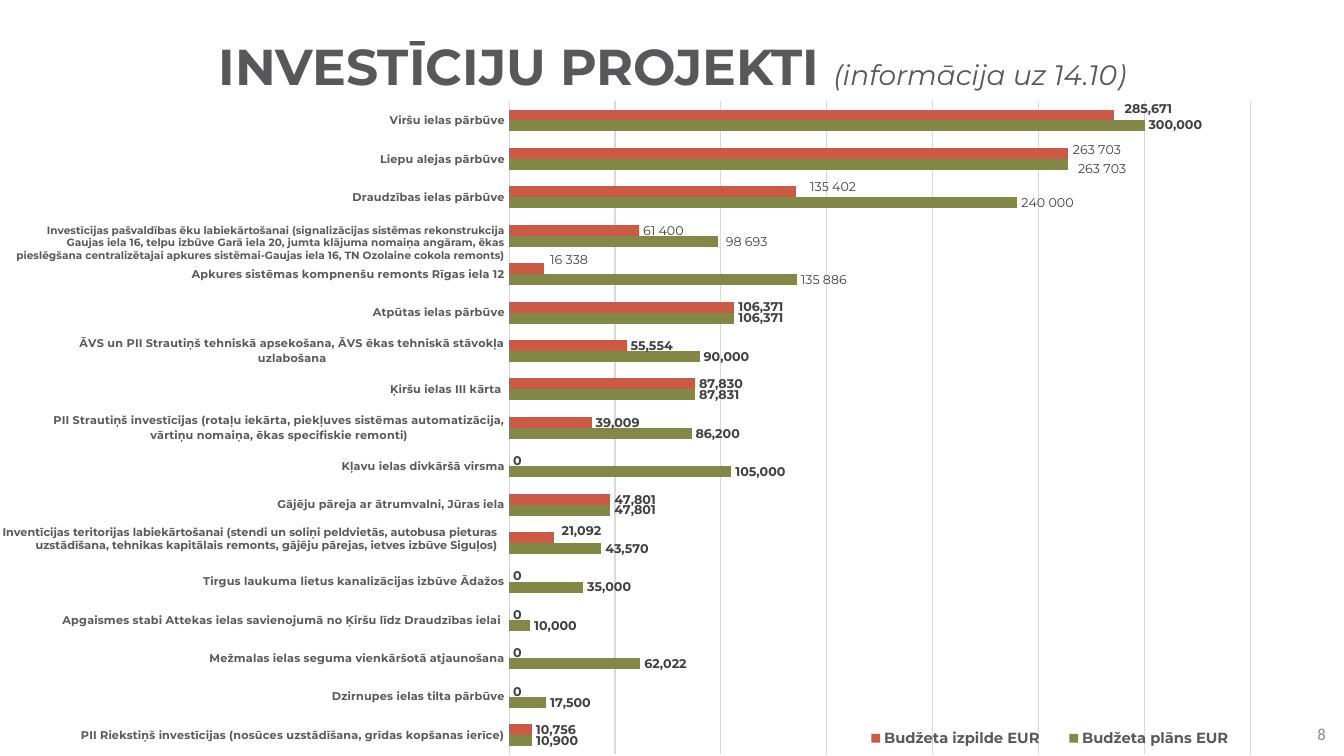
from lxml import etree
from pptx import Presentation
from pptx.chart.data import CategoryChartData
from pptx.dml.color import RGBColor
from pptx.enum.chart import XL_CHART_TYPE, XL_LABEL_POSITION, XL_LEGEND_POSITION, XL_TICK_MARK
from pptx.enum.text import MSO_ANCHOR, PP_ALIGN
from pptx.oxml import parse_xml
from pptx.util import Inches, Pt

BAR = XL_CHART_TYPE.BAR_CLUSTERED
OUTSIDE_END = XL_LABEL_POSITION.OUTSIDE_END
BOTTOM = XL_LEGEND_POSITION.BOTTOM
NO_TICK = XL_TICK_MARK.NONE
MIDDLE = MSO_ANCHOR.MIDDLE
CENTER, RIGHT = PP_ALIGN.CENTER, PP_ALIGN.RIGHT

TITLE_GREY = RGBColor(0x58, 0x58, 0x5B)
TEXT_GREY = RGBColor(0x59, 0x59, 0x59)
LABEL_GREY = RGBColor(0x40, 0x40, 0x40)
GRID_GREY = RGBColor(0xD9, 0xD9, 0xD9)
NUMBER_GREY = RGBColor(0x8C, 0x8C, 0x8C)
OLIVE = RGBColor(0x82, 0x88, 0x47)
RED = RGBColor(0xC9, 0x5B, 0x46)
FONT = "Montserrat"
C_NS = "http://schemas.openxmlformats.org/drawingml/2006/chart"

TITLE = "INVESTĪCIJU PROJEKTI "
SUBTITLE = "(informācija uz 14.10)"
# Project, planned budget, spent budget; from the bottom bar to the top one
PROJECTS = [
    ("PII Riekstiņš investīcijas (nosūces uzstādīšana, grīdas kopšanas ierīce)", 10900, 10756),
    ("Dzirnupes ielas tilta pārbūve", 17500, 0),
    ("Mežmalas ielas seguma vienkāršotā atjaunošana", 62022, 0),
    ("Apgaismes stabi Attekas ielas savienojumā no Ķiršu līdz Draudzības ielai ", 10000, 0),
    ("Tirgus laukuma lietus kanalizācijas izbūve Ādažos", 35000, 0),
    ("", 43570, 21092),
    ("Gājēju pāreja ar ātrumvalni, Jūras iela", 47801, 47801),
    ("Kļavu ielas divkāršā virsma", 105000, 0),
    ("PII Strautiņš investīcijas (rotaļu iekārta, piekļuves sistēmas automatizācija, "
     "vārtiņu nomaiņa, ēkas specifiskie remonti)", 86200, 39009),
    ("Ķiršu ielas III kārta ", 87831, 87830),
    ("ĀVS un PII Strautiņš tehniskā apsekošana, ĀVS ēkas tehniskā stāvokļa uzlabošana", 90000, 55554),
    ("Atpūtas ielas pārbūve", 106371, 106371),
    ("Apkures sistēmas kompnenšu remonts Rīgas iela 12", 135886, 16338),
    ("", 98693, 61400),
    ("Draudzības ielas pārbūve", 240000, 135402),
    ("Liepu alejas pārbūve", 263703, 263703),
    ("Viršu ielas pārbūve", 300000, 285671),
]
# Name, colour, {point: (own text or None, x shift, y shift)}; shifts are shares of the chart
SERIES = [
    ("Budžeta plāns EUR", OLIVE, {
        12: ("135 886", 0, 0), 13: ("98 693", 0.003, 0), 14: ("240 000", 0, 0),
        15: ("263 703", 0.005, 0.007), 16: (None, 0, -0.002)}),
    ("Budžeta izpilde EUR", RED, {
        5: (None, 0.003, -0.01), 12: ("16 338", 0.002, -0.013), 13: ("61 400", 0, 0),
        14: ("135 402", 0.008, -0.008), 15: ("263 703", 0.001, -0.006), 16: (None, 0.005, -0.01)}),
]
# Left, top, width, height, size, text
LONG_LABELS = [
    (0.01, 2.17, 5.09, 0.48, 7.5,
     "Investīcijas pašvaldības ēku labiekārtošanai (signalizācijas sistēmas rekonstrukcija "
     "Gaujas iela 16, telpu izbūve Garā iela 20, jumta klājuma nomaiņa angāram, ēkas pieslēgšana "
     "centralizētajai apkures sistēmai-Gaujas iela 16, TN Ozolaine cokola remonts)"),
    (-0.13, 5.16, 5.17, 0.37, 8,
     "Inventīcijas teritorijas labiekārtošanai (stendi un soliņi peldvietās, autobusa pieturas "
     "uzstādīšana, tehnikas kapitālais remonts, gājēju pārejas, ietves izbūve Siguļos)"),
]


def style(font, size, color, bold=False, name=FONT):
    font.name, font.size, font.bold = name, Pt(size), bold
    font.color.rgb = color


def manual_layout(x, y, w=None, h=None, inner=False):
    """Chart layout element: a shift for a label, or a frame if w and h are given."""
    layout = parse_xml(f'<c:layout xmlns:c="{C_NS}"><c:manualLayout/></c:layout>')
    items = [("layoutTarget", "inner")] if inner else []
    if w:
        items += [("xMode", "edge"), ("yMode", "edge")]
    items += [("x", x), ("y", y)]
    if w:
        items += [("w", w), ("h", h)]
    for tag, val in items:
        etree.SubElement(layout[0], f"{{{C_NS}}}{tag}").set("val", str(val))
    return layout


def set_layout(parent, after, layout):
    for old in parent.findall(f"{{{C_NS}}}layout"):
        parent.remove(old)
    if after:
        parent.find(f"{{{C_NS}}}{after}").addnext(layout)
    else:
        parent.insert(0, layout)


def add_text(s, box, text, size, color, bold=False, name=FONT):
    tf = s.shapes.add_textbox(*map(Inches, box)).text_frame
    tf.word_wrap = True
    p = tf.paragraphs[0]
    p.text, p.alignment = text, RIGHT
    style(p.font, size, color, bold, name)
    return tf


def label_series(ser, color, own_labels):
    ser.format.fill.solid()
    ser.format.fill.fore_color.rgb = color
    labels = ser.data_labels
    labels.show_value = True
    labels.number_format, labels.number_format_is_linked = "#,##0", False
    labels.position = OUTSIDE_END
    style(labels.font, 9, LABEL_GREY, True)
    for i, (text, dx, dy) in own_labels.items():
        label = ser.points[i].data_label
        if text:
            p = label.text_frame.paragraphs[0]
            r = p.add_run()
            r.text = text
            style(r.font, 9, LABEL_GREY)
        else:
            style(label.font, 9, LABEL_GREY, True)
        label.position = OUTSIDE_END
        dLbl = ser._element.xpath(f'.//c:dLbl[c:idx/@val="{i}"]')[0]
        set_layout(dLbl, "idx", manual_layout(dx, dy))


def add_budget_chart(s):
    data = CategoryChartData(number_format="#,##0")
    names, *columns = zip(*PROJECTS)
    data.categories = names
    for (name, _, _), values in zip(SERIES, columns):
        data.add_series(name, values)
    box = map(Inches, (0.24, 0.92, 12.79, 6.57))
    chart = s.shapes.add_chart(BAR, *box, data).chart
    chart.has_title = False
    style(chart.font, 10, RGBColor(0, 0, 0), name="Calibri")

    plot = chart.plots[0]
    plot.gap_width, plot.overlap, plot.vary_by_categories = 150, 0, False
    for ser, (_, color, own_labels) in zip(plot.series, SERIES):
        label_series(ser, color, own_labels)

    cat = chart.category_axis
    cat.major_tick_mark = cat.minor_tick_mark = NO_TICK
    cat.format.line.fill.background()
    style(cat.tick_labels.font, 8, TEXT_GREY, True)
    val = chart.value_axis
    val.minimum_scale, val.maximum_scale, val.major_unit = 0, 350000, 50000
    val.major_gridlines.format.line.color.rgb = GRID_GREY
    val.major_gridlines.format.line.width = Pt(0.75)
    val.visible = False

    chart.has_legend = True
    legend = chart.legend
    legend.position, legend.include_in_layout = BOTTOM, False
    style(legend.font, 10.5, TEXT_GREY, True)
    set_layout(legend._element, "legendPos", manual_layout(0.638, 0.953, 0.315, 0.045))
    plot_area = chart._chartSpace.chart.plotArea
    set_layout(plot_area, None, manual_layout(0.376, 0.013, 0.575, 0.987, inner=True))


prs = Presentation()
prs.slide_width, prs.slide_height = Inches(13.33), Inches(7.5)
s = prs.slides.add_slide(prs.slide_layouts[5])

title = s.shapes.title
title.left, title.top, title.width, title.height = map(Inches, (0.93, 0.22, 11.48, 0.93))
title.text_frame.vertical_anchor = MIDDLE
p = title.text_frame.paragraphs[0]
p.alignment, p.line_spacing = CENTER, 0.9
for text, size, bold in ((TITLE, 36, True), (SUBTITLE, 20, False)):
    r = p.add_run()
    r.text = text
    style(r.font, size, TITLE_GREY, bold)
    r.font.italic = not bold

number = add_text(s, (10.25, 7.08, 3, 0.4), "8", 12, NUMBER_GREY, name="Calibri")
number.vertical_anchor = MIDDLE
add_budget_chart(s)
for *box, size, text in LONG_LABELS:
    add_text(s, box, text, size, TEXT_GREY, True)

prs.save("out.pptx")
